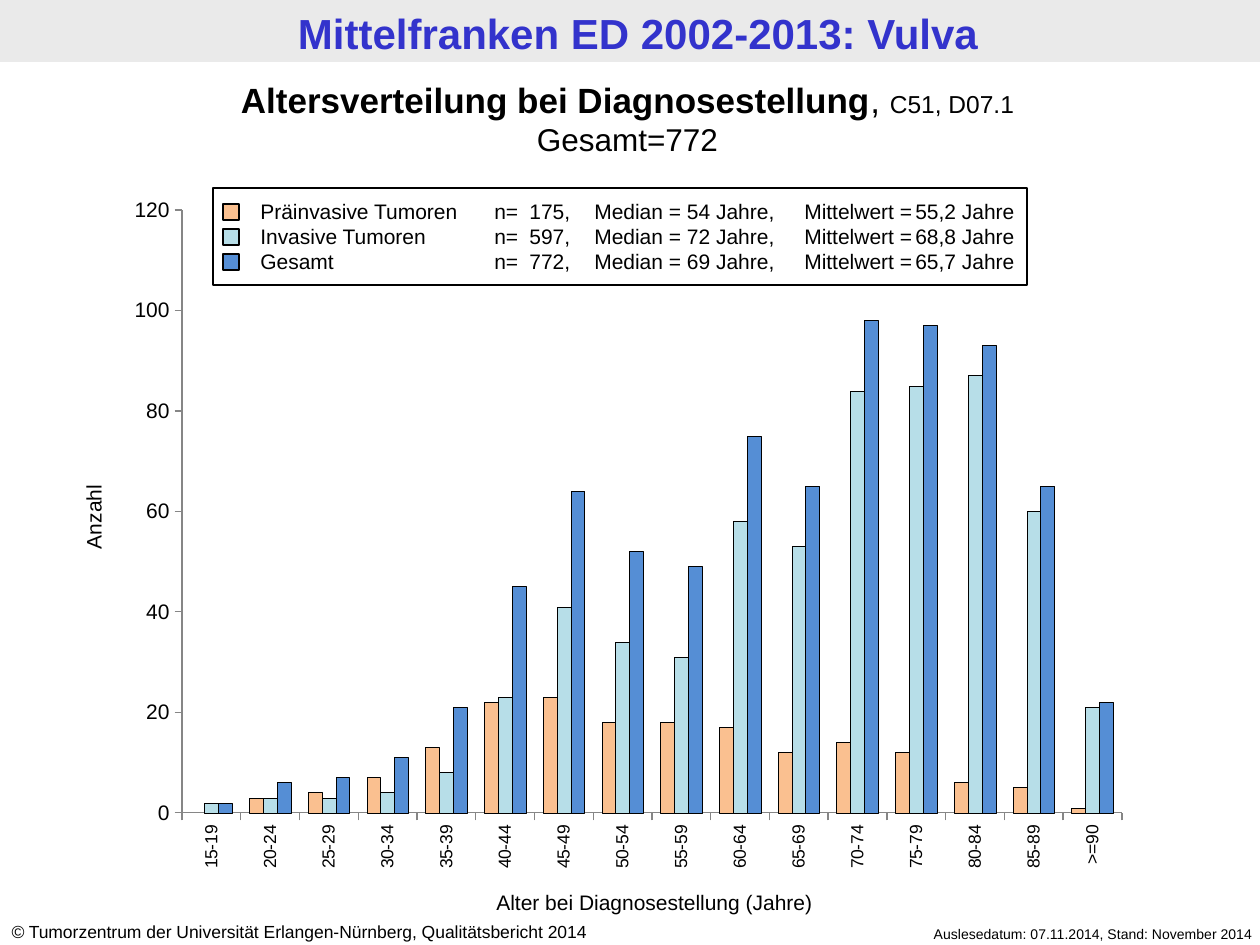
import pptx
import pptx.util
import pptx.chart.data
import pptx.dml.color
import pptx.enum.chart
import pptx.enum.shapes
import pptx.enum.text
import pptx.oxml.ns
from lxml import etree

SCALE = 914400 / 126  # EMU per px
HUES = {"band": "EAEAEA", "title": "3333CC", "ink": "000000", "axis": "868686",
        "paper": "FFFFFF", "pre": "FAC090", "inv": "B7DEE8", "all": "558ED5"}
ALIGN = pptx.enum.text.PP_ALIGN
RECT = pptx.enum.shapes.MSO_SHAPE.RECTANGLE
qn = pptx.oxml.ns.qn

AGES = [f"{n}-{n + 4}" for n in range(15, 90, 5)] + [">=90"]
# name, colour, count, median, mean, cases by age group
GROUPS = [
    ("Präinvasive Tumoren", "pre", 175, 54, "55,2",
     [None, 3, 4, 7, 13, 22, 23, 18, 18, 17, 12, 14, 12, 6, 5, 1]),
    ("Invasive Tumoren", "inv", 597, 72, "68,8",
     [2, 3, 3, 4, 8, 23, 41, 34, 31, 58, 53, 84, 85, 87, 60, 21]),
    ("Gesamt", "all", 772, 69, "65,7",
     [2, 6, 7, 11, 21, 45, 64, 52, 49, 75, 65, 98, 97, 93, 65, 22]),
]


def px(*nums):
    return [round(n * SCALE) for n in nums]


def hue(name):
    return pptx.dml.color.RGBColor.from_string(HUES[name])


def style(font, size=12, color="ink", bold=False, italic=False):
    font.name = "Arial"
    font.size = pptx.util.Pt(size)
    font.bold, font.italic = bold, italic
    font.color.rgb = hue(color)


def write(frame, lines, align=ALIGN.LEFT, tabs=(), **form):
    """Each line is a string or a list of (string, format) runs."""
    frame.word_wrap = True
    frame.vertical_anchor = pptx.enum.text.MSO_ANCHOR.TOP
    for i, line in enumerate(lines):
        para = frame.paragraphs[0] if i == 0 else frame.add_paragraph()
        para.alignment = align
        if tabs:
            stops = etree.SubElement(para._p.get_or_add_pPr(), qn("a:tabLst"))
            for pos, side in tabs:
                etree.SubElement(stops, qn("a:tab"), pos=str(px(pos)[0]), algn=side)
        for words, extra in [(line, {})] if isinstance(line, str) else line:
            run = para.add_run()
            run.text = words
            style(run.font, **{**form, **extra})


def label(slide, box, lines, turn=0, **form):
    shape = slide.shapes.add_textbox(*px(*box))
    shape.rotation = turn
    write(shape.text_frame, lines, **form)


def block(slide, box, fill=None, line=None):
    shape = slide.shapes.add_shape(RECT, *px(*box))
    shape.shadow.inherit = False
    if fill:
        shape.fill.solid()
        shape.fill.fore_color.rgb = hue(fill)
    else:
        shape.fill.background()
    if line:
        shape.line.color.rgb = hue(line)
        shape.line.width = pptx.util.Pt(0.75)
    else:
        shape.line.fill.background()
    return shape


def header(slide, box):
    x, y, w, h = box
    band = block(slide, box, fill="band")
    title = slide.shapes.title
    title._element.addprevious(band._element)  # band lies behind the title
    title.left, title.top, title.width, title.height = px(x + 8, y + 1, w, h)
    write(title.text_frame, ["Mittelfranken ED 2002-2013: Vulva"],
          align=ALIGN.CENTER, size=24, color="title", bold=True)


def footer(slide, box):
    x, y, w, h = box
    label(slide, (x - 1, y, 660, h), [[
        ("©", {"italic": True}),
        (" Tumorzentrum der Universität Erlangen-Nürnberg, Qualitätsbericht 2014", {})]],
        size=10)
    label(slide, (x + w - 422, y + 4, 427, h - 4),
          ["Auslesedatum: 07.11.2014, Stand: November 2014"],
          align=ALIGN.RIGHT, size=8)


def graph(slide, box):
    x, y, w, h = box
    data = pptx.chart.data.CategoryChartData()
    data.categories = AGES
    for name, *_, cases in GROUPS:
        data.add_series(name, cases)
    kind = pptx.enum.chart.XL_CHART_TYPE.COLUMN_CLUSTERED
    chart = slide.shapes.add_chart(kind, *px(*box), data).chart
    chart.has_legend = chart.has_title = False
    style(chart.font)

    # Bars
    plot = chart.plots[0]
    plot.gap_width, plot.overlap = 124, 0
    plot.vary_by_categories = False
    for series, group in zip(plot.series, GROUPS):
        series.invert_if_negative = False
        series.format.fill.solid()
        series.format.fill.fore_color.rgb = hue(group[1])
        series.format.line.color.rgb = hue("ink")
        series.format.line.width = pptx.util.Pt(0.25)

    # Axes
    for axis, size in (chart.category_axis, 10), (chart.value_axis, 12):
        axis.has_major_gridlines = False
        axis.major_tick_mark = pptx.enum.chart.XL_TICK_MARK.OUTSIDE
        axis.format.line.color.rgb = hue("axis")
        axis.format.line.width = pptx.util.Pt(0.75)
        style(axis.tick_labels.font, size=size)
    axis.minimum_scale, axis.maximum_scale, axis.major_unit = 0, 120, 20
    body = chart.category_axis._element.find(".//" + qn("a:bodyPr"))
    body.set("rot", "-5400000")
    body.set("vert", "horz")

    # Inner plot area
    area = chart._chartSpace.find(".//" + qn("c:plotArea"))
    for old in area.findall(qn("c:layout")):
        area.remove(old)
    layout = etree.Element(qn("c:layout"))
    area.insert(0, layout)
    manual = etree.SubElement(layout, qn("c:manualLayout"))
    for tag, val in (("layoutTarget", "inner"), ("xMode", "edge"), ("yMode", "edge"),
                     ("x", 67 / w), ("y", 25 / h), ("w", 940 / w), ("h", 603 / h)):
        etree.SubElement(manual, qn("c:" + tag), val=str(val))

    # Axis titles
    label(slide, (x + 346, y + 698, 387, 38), ["Alter bei Diagnosestellung (Jahre)"],
          align=ALIGN.CENTER)
    label(slide, (x - 186, y + 313, 329, 38), ["Anzahl"], turn=270, align=ALIGN.CENTER)


def legend(slide, box):
    x, y, w, h = box
    rows = [f"{name}\tn=\t{count},\tMedian = {mid} Jahre,\tMittelwert =\t{mean} Jahre"
            for name, _, count, mid, mean, _ in GROUPS]
    label(slide, (x + 35, y + 4, w - 5, h - 8), rows,
          tabs=[(234, "l"), (310, "r"), (334, "l"), (544, "l"), (655, "l")])
    block(slide, box, line="ink")
    for i, group in enumerate(GROUPS):
        block(slide, (x + 10, y + 16 + 25 * i, 16, 16), fill=group[1], line="ink")


def main():
    deck = pptx.Presentation()
    deck.slide_width, deck.slide_height = px(1260, 945)
    slide = deck.slides.add_slide(deck.slide_layouts[5])
    header(slide, (0, 0, 1260, 62))
    footer(slide, (0, 915, 1260, 34))
    label(slide, (-5, 72, 1265, 93), [
        [("Altersverteilung bei Diagnosestellung", {"bold": True}),
         (", ", {}), ("C51, D07.1", {"size": 14})],
        [("Gesamt=772", {"size": 18})]], align=ALIGN.CENTER, size=20)
    graph(slide, (115, 185, 1028, 699))
    legend(slide, (213, 188, 814, 97))
    deck.save("out.pptx")


if __name__ == "__main__":
    main()
